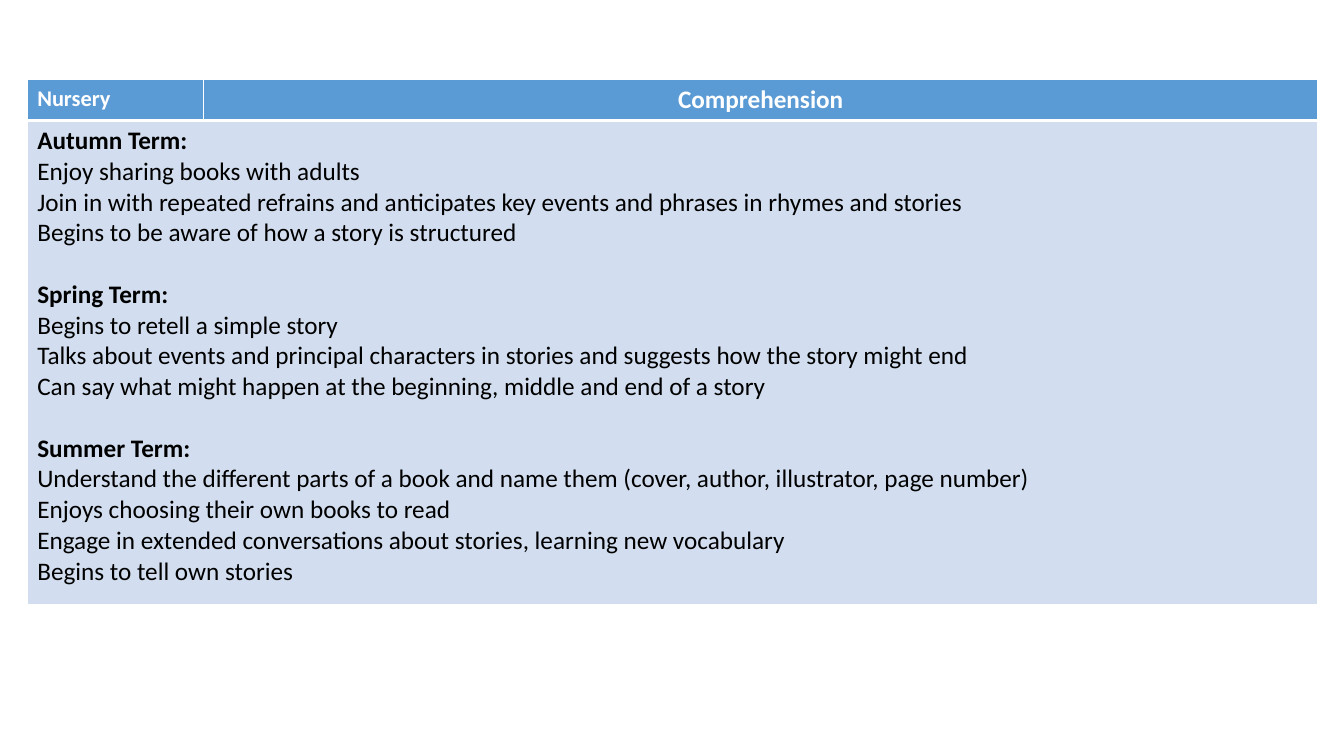
from lxml.etree import SubElement
from pptx import Presentation
from pptx.dml.color import RGBColor
from pptx.enum.text import PP_ALIGN
from pptx.oxml.ns import qn
from pptx.util import Inches, Pt

WHITE = RGBColor(0xFF, 0xFF, 0xFF)
BLACK = RGBColor(0, 0, 0)
HEADER_BLUE = RGBColor(0x5B, 0x9B, 0xD5)
BODY_BLUE = RGBColor(0xD2, 0xDE, 0xEF)

COLUMN_WIDTHS = [1.75, 11.05]
ROW_HEIGHTS = [0.4, 4.8]
LINE_HEIGHT = 22

TERMS = {
    "Autumn Term:": [
        "Enjoy sharing books with adults",
        "Join in with repeated refrains and anticipates key events and phrases in rhymes and stories",
        "Begins to be aware of how a story is structured",
    ],
    "Spring Term:": [
        "Begins to retell a simple story",
        "Talks about events and principal characters in stories and suggests how the story might end",
        "Can say what might happen at the beginning, middle and end of a story",
    ],
    "Summer Term:": [
        "Understand the different parts of a book and name them (cover, author, illustrator, page number)",
        "Enjoys choosing their own books to read",
        "Engage in extended conversations about stories, learning new vocabulary",
        "Begins to tell own stories",
    ],
}


def write(para, text, size=18, bold=False, color=BLACK, align=PP_ALIGN.LEFT, before=0):
    para.alignment = align
    para.space_before = Pt(before)
    span = para.add_run()
    span.text = text
    span.font.name = "Calibri"
    span.font.size = Pt(size)
    span.font.bold = bold
    span.font.color.rgb = color


def style_cell(cell, fill, top, bottom):
    properties = cell._tc.get_or_add_tcPr()
    for side, width in {"L": 1, "R": 1, "T": top, "B": bottom}.items():
        line = SubElement(properties, qn(f"a:ln{side}"), w=str(Pt(width)))
        paint = SubElement(line, qn("a:solidFill"))
        SubElement(paint, qn("a:srgbClr"), val=str(WHITE))
    cell.fill.solid()
    cell.fill.fore_color.rgb = fill


deck = Presentation()
deck.slide_width = Inches(13.33)
deck.slide_height = Inches(7.5)
page = deck.slides.add_slide(deck.slide_layouts[6])

# Table grid
table = page.shapes.add_table(
    len(ROW_HEIGHTS), len(COLUMN_WIDTHS), Inches(0.27), Inches(0.79),
    Inches(sum(COLUMN_WIDTHS)), Inches(sum(ROW_HEIGHTS)),
).table
for column, width in zip(table.columns, COLUMN_WIDTHS):
    column.width = Inches(width)
for row, height in zip(table.rows, ROW_HEIGHTS):
    row.height = Inches(height)

# Fills and borders, with a thick rule under the header
for column in range(len(COLUMN_WIDTHS)):
    style_cell(table.cell(0, column), HEADER_BLUE, top=1, bottom=3)
    style_cell(table.cell(1, column), BODY_BLUE, top=3, bottom=1)

# Header row
write(table.cell(0, 0).text_frame.paragraphs[0], "Nursery", size=16, bold=True, color=WHITE)
write(table.cell(0, 1).text_frame.paragraphs[0], "Comprehension", bold=True, color=WHITE,
      align=PP_ALIGN.CENTER)

# Terms in one merged cell, set apart by a line of space
body = table.cell(1, 0)
body.merge(table.cell(1, 1))
para = body.text_frame.paragraphs[0]
for number, (term, goals) in enumerate(TERMS.items()):
    if number:
        para = body.text_frame.add_paragraph()
    write(para, term, bold=True, before=LINE_HEIGHT if number else 0)
    for goal in goals:
        write(body.text_frame.add_paragraph(), goal)

deck.save("out.pptx")
